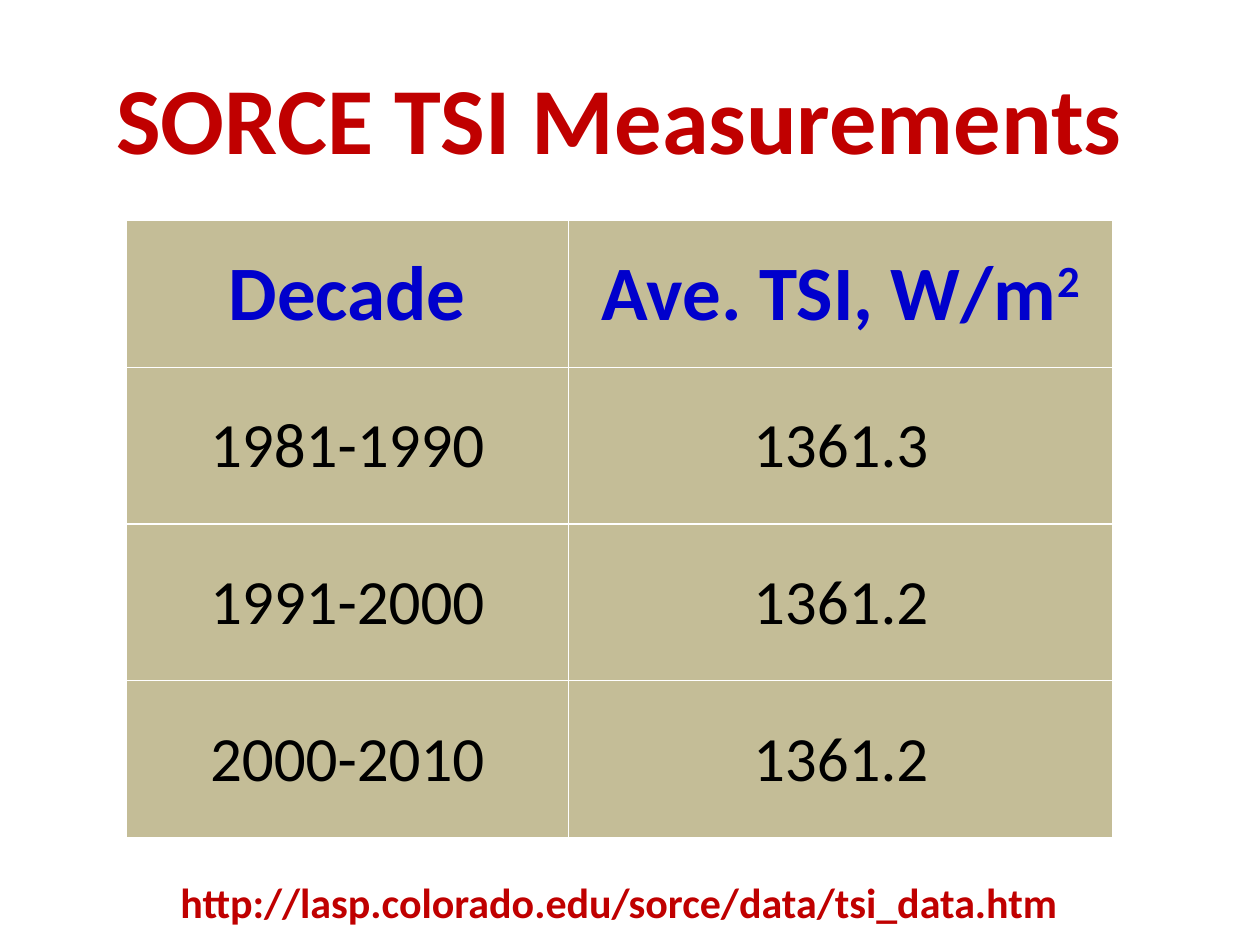
"""Build the slide with the table of mean TSI by decade."""
from lxml import etree
from pptx import Presentation
from pptx.dml.color import RGBColor
from pptx.enum import text as t
from pptx.oxml import ns
from pptx.util import Pt

RED = RGBColor(0xC0, 0x00, 0x00)
BLUE = RGBColor(0x00, 0x00, 0xCC)
BLACK = RGBColor(0x00, 0x00, 0x00)
WHITE = RGBColor(0xFF, 0xFF, 0xFF)
TAN = RGBColor(0xC4, 0xBD, 0x97)

ROWS = [
    ("Decade", "Ave. TSI, W/m"),
    ("1981-1990", "1361.3"),
    ("1991-2000", "1361.2"),
    ("2000-2010", "1361.2"),
]
WIDTHS = (253, 311)
HEIGHTS = (84, 89.5, 89.5, 89.5)


def style(para, size, color, bold, align):
    para.alignment = align
    for run in para.runs:
        font = run.font
        font.name, font.size, font.bold = "Calibri", Pt(size), bold
        font.color.rgb = color


def add_text(slide, words, box, size, align, anchor):
    frame = slide.shapes.add_textbox(*map(Pt, box)).text_frame
    frame.word_wrap = True
    frame.vertical_anchor = anchor
    frame.text = words
    style(frame.paragraphs[0], size, RED, True, align)


def add_edges(cell):
    props = cell._tc.get_or_add_tcPr()
    for spot, side in enumerate(("lnL", "lnR", "lnT", "lnB")):
        line = etree.Element(ns.qn(f"a:{side}"), w=str(Pt(1)))
        fill = etree.SubElement(line, ns.qn("a:solidFill"))
        etree.SubElement(fill, ns.qn("a:srgbClr"), val=str(WHITE))
        props.insert(spot, line)


def fill_cell(cell, words, head):
    cell.fill.solid()
    cell.fill.fore_color.rgb = TAN
    cell.vertical_anchor = t.MSO_ANCHOR.MIDDLE
    cell.margin_left = cell.margin_right = cell.margin_top = Pt(0.75)
    cell.margin_bottom = 0
    cell.text = words
    para = cell.text_frame.paragraphs[0]
    if words.endswith("W/m"):
        power = para.add_run()
        power.text = "2"
        power._r.get_or_add_rPr().set("baseline", "30000")
    size, color = (44, BLUE) if head else (36, BLACK)
    style(para, size, color, head, t.PP_ALIGN.CENTER)
    add_edges(cell)


def add_grid(slide, left, top):
    shape = slide.shapes.add_table(
        len(ROWS), len(WIDTHS), Pt(left), Pt(top), Pt(sum(WIDTHS)), Pt(sum(HEIGHTS)))
    table = shape.table
    for col, width in zip(table.columns, WIDTHS):
        col.width = Pt(width)
    for r, (row, height) in enumerate(zip(table.rows, HEIGHTS)):
        row.height = Pt(height)
        for cell, words in zip(row.cells, ROWS[r]):
            fill_cell(cell, words, r == 0)


def main():
    deck = Presentation()
    deck.slide_width, deck.slide_height = Pt(720), Pt(540)
    slide = deck.slides.add_slide(deck.slide_layouts[6])
    add_text(slide, "SORCE TSI Measurements ", (36, 21.6, 648, 90), 54,
             t.PP_ALIGN.CENTER, t.MSO_ANCHOR.MIDDLE)
    add_grid(slide, 72, 126)
    add_text(slide, "http://lasp.colorado.edu/sorce/data/tsi_data.htm",
             (96, 497.5, 546, 36), 24, t.PP_ALIGN.LEFT, t.MSO_ANCHOR.TOP)
    deck.save("out.pptx")


if __name__ == "__main__":
    main()
